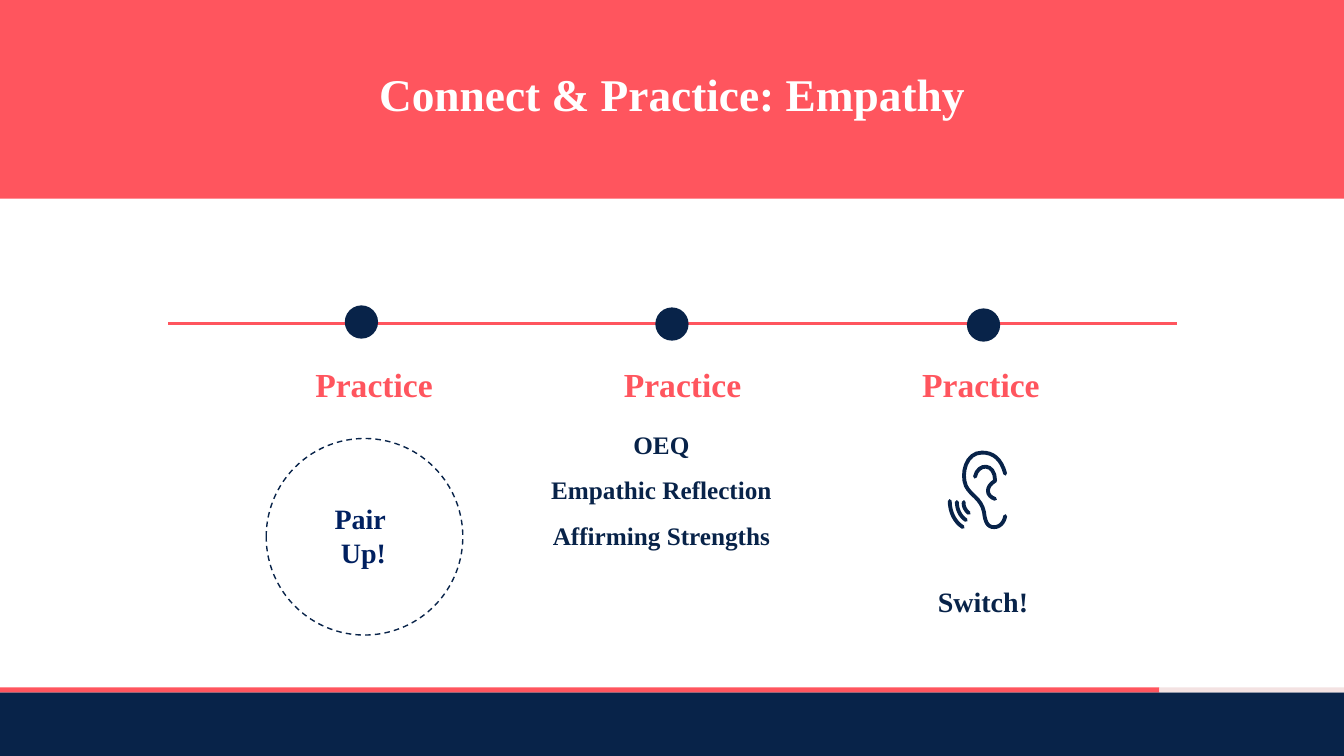
from lxml import etree
from pptx import Presentation
from pptx.dml.color import RGBColor
from pptx.enum.dml import MSO_LINE
from pptx.enum.shapes import MSO_CONNECTOR, MSO_SHAPE
from pptx.enum.text import MSO_ANCHOR, MSO_AUTO_SIZE, PP_ALIGN
from pptx.oxml.ns import qn
from pptx.util import Inches, Pt

RECTANGLE, OVAL = MSO_SHAPE.RECTANGLE, MSO_SHAPE.OVAL
STRAIGHT = MSO_CONNECTOR.STRAIGHT
CENTER = PP_ALIGN.CENTER
MIDDLE = MSO_ANCHOR.MIDDLE
DASH = MSO_LINE.DASH
NO_AUTOFIT, GROW = MSO_AUTO_SIZE.NONE, MSO_AUTO_SIZE.SHAPE_TO_FIT_TEXT
FONT = "Times New Roman"
CORAL, NAVY, BLUE, BLUSH, WHITE = "FF555E", "082349", "002060", "F3E2E2", "FFFFFF"
BEZIER_STEPS = 8


def color(hex_string):
    return RGBColor.from_string(hex_string)


def write_text(shape, text, size, hex_string, line_spacing):
    frame = shape.text_frame
    frame.text = text
    frame.word_wrap = True
    for paragraph in frame.paragraphs:
        paragraph.alignment = CENTER
        paragraph.line_spacing = line_spacing
        for run in paragraph.runs:
            run.font.name = FONT
            run.font.size = Pt(size)
            run.font.bold = True
            run.font.color.rgb = color(hex_string)


presentation = Presentation()
presentation.slide_width = Inches(13.33)
presentation.slide_height = Inches(7.5)
slide = presentation.slides.add_slide(presentation.slide_layouts[5])

title = slide.shapes.title
title.left, title.top = Inches(0.33), Inches(0.67)
title.width, title.height = Inches(12.67), Inches(0.58)
write_text(title, "Connect & Practice: Empathy", 32.4, WHITE, 0.9)
title.text_frame.auto_size = NO_AUTOFIT
title.text_frame.vertical_anchor = MIDDLE

bands = [
    (0, 0, 13.33, 1.97, CORAL),
    (0, 6.87, 13.33, 0.63, NAVY),
    (0, 6.82, 11.5, 0.05, CORAL),
    (11.5, 6.82, 1.83, 0.05, BLUSH),
]
for left, top, width, height, fill in bands:
    band = slide.shapes.add_shape(
        RECTANGLE, Inches(left), Inches(top), Inches(width), Inches(height))
    band.shadow.inherit = False
    band.fill.solid()
    band.fill.fore_color.rgb = color(fill)
    band.line.fill.background()
    title.element.addprevious(band.element)

timeline = slide.shapes.add_connector(
    STRAIGHT, Inches(1.67), Inches(3.21), Inches(11.67), Inches(3.21))
timeline.line.color.rgb = color(CORAL)
timeline.line.width = Pt(2.25)
etree.SubElement(timeline.element.spPr, qn("a:effectLst"))

pair_group = slide.shapes.add_group_shape()
circle = pair_group.shapes.add_shape(
    OVAL, Inches(2.64), Inches(4.35), Inches(1.95), Inches(1.95))
circle.shadow.inherit = False
circle.fill.background()
circle.line.color.rgb = color(NAVY)
circle.line.width = Pt(1)
circle.line.dash_style = DASH

labels = [
    (pair_group, 2.83, 4.93, 1.55, 0.77, "Pair \nUp!", 20, BLUE, 1),
    (slide, 5.02, 4.06, 3.08, 1.46,
     "OEQ\nEmpathic Reflection\nAffirming Strengths", 18, NAVY, 1.5),
    *[(slide, left, 3.56, 2.74, 0.5, "Practice", 24, CORAL, 1)
      for left in (2.34, 5.4, 8.36)],
    (slide, 8.72, 5.75, 2.06, 0.44, "Switch!", 20, NAVY, 1),
]
for parent, left, top, width, height, text, size, text_color, spacing in labels:
    label = parent.shapes.add_textbox(
        Inches(left), Inches(top), Inches(width), Inches(height))
    write_text(label, text, size, text_color, spacing)
    label.text_frame.auto_size = GROW

for left, top in [(3.42, 3.03), (6.5, 3.05), (9.59, 3.06)]:
    dot = slide.shapes.add_shape(
        OVAL, Inches(left), Inches(top), Inches(0.33), Inches(0.33))
    dot.shadow.inherit = False
    dot.fill.solid()
    dot.fill.fore_color.rgb = color(NAVY)
    dot.line.fill.background()

ear_curves = [
    [(9.56, 4.98), (9.55, 5.02), (9.58, 5.07), (9.61, 5.09)],
    [(9.49, 4.98), (9.49, 5.05), (9.52, 5.12), (9.58, 5.16)],
    [(9.42, 4.97), (9.42, 5.08), (9.47, 5.18), (9.55, 5.23)],
    [(9.97, 4.7), (9.93, 4.55), (9.85, 4.49), (9.74, 4.49),
     (9.58, 4.49), (9.53, 4.7), (9.58, 4.82),
     (9.63, 4.92), (9.73, 4.94), (9.76, 5.08),
     (9.77, 5.17), (9.79, 5.23), (9.86, 5.23),
     (9.92, 5.23), (9.96, 5.18), (9.97, 5.12)],
    [(9.67, 4.73), (9.7, 4.59), (9.87, 4.59), (9.87, 4.77),
     (9.77, 4.83), (9.78, 4.92), (9.87, 4.95)],
]
ear_group = slide.shapes.add_group_shape()
for curve in ear_curves:
    points = []
    for first in range(0, len(curve) - 1, 3):
        for step in range(1, BEZIER_STEPS + 1):
            t = step / BEZIER_STEPS
            weights = ((1 - t) ** 3, 3 * t * (1 - t) ** 2, 3 * t ** 2 * (1 - t), t ** 3)
            controls = curve[first:first + 4]
            points.append(tuple(
                Inches(sum(weight * point[axis] for weight, point in zip(weights, controls)))
                for axis in (0, 1)))
    builder = ear_group.shapes.build_freeform(Inches(curve[0][0]), Inches(curve[0][1]))
    builder.add_line_segments(points, close=False)
    ear_stroke = builder.convert_to_shape()
    ear_stroke.shadow.inherit = False
    ear_stroke.fill.background()
    ear_stroke.line.color.rgb = color(NAVY)
    ear_stroke.line.width = Pt(2.75)
    ear_stroke.element.spPr.find(qn("a:ln")).set("cap", "rnd")

presentation.save("out.pptx")
